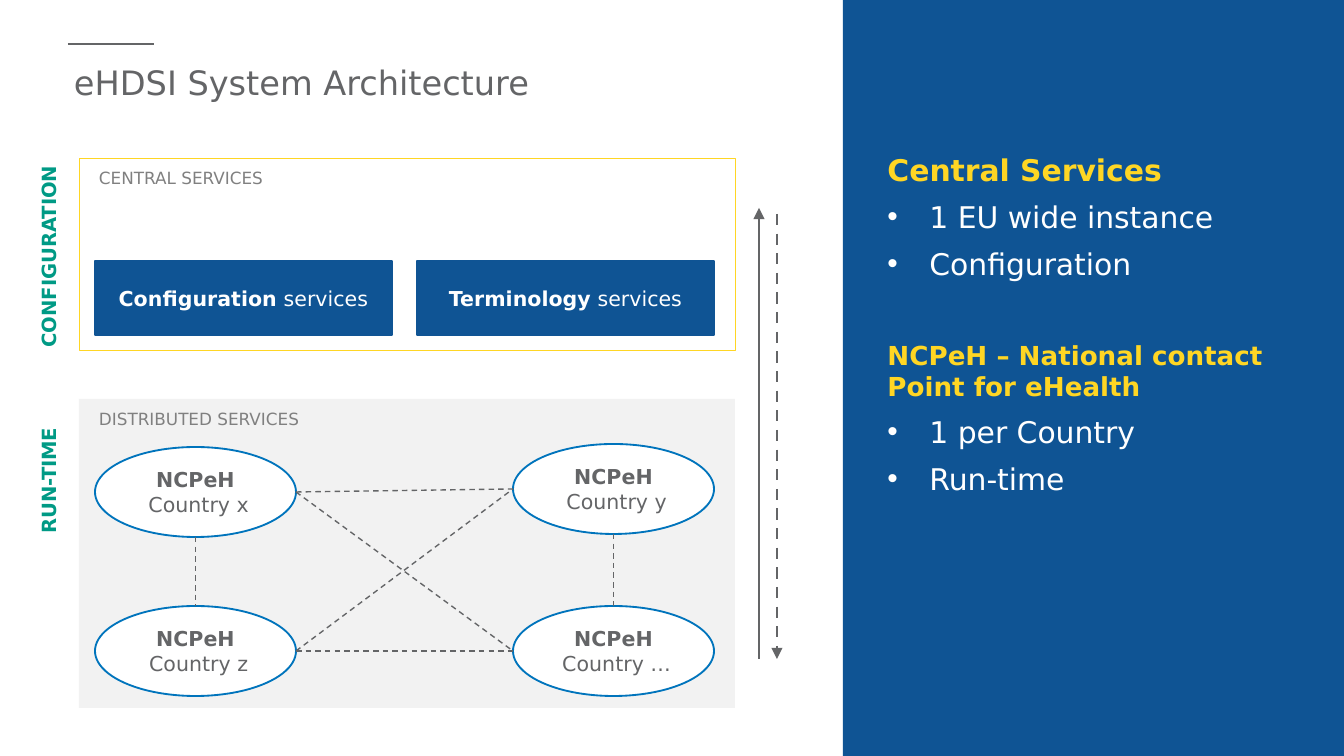
from lxml import etree
from pptx import Presentation
from pptx import util as u
from pptx.dml import color, line as dml_line
from pptx.enum import dml, shapes, text
from pptx.oxml import ns

FONT = "DejaVu Sans"
BLUE, YELLOW, GREY, WHITE = "0F5494", "FFD624", "646567", "FFFFFF"
OVAL_W, OVAL_H = 201, 90
LEFT_X, RIGHT_X = 95, 513
BULLET_INDENT = 42


def px(length):
    """Turn whole pixels into EMU."""
    return u.Emu(round(length * 914400 / 134.4))


def rgb(value):
    """Turn a hex string into a colour."""
    return color.RGBColor.from_string(value)


def add_span(para, wording, size, ink, bold=False):
    """Add one formatted run to a paragraph."""
    span = para.add_run()
    span.text = wording
    span.font.name = FONT
    span.font.size = u.Pt(size)
    span.font.bold = bold
    span.font.color.rgb = rgb(ink)


def place(box, left, top, width, height):
    """Move and size a shape."""
    box.left, box.top, box.width, box.height = map(px, (left, top, width, height))


def add_block(page, kind, bounds, fill, outline=None, weight=1):
    """Add a filled preset shape with an optional outline."""
    box = page.shapes.add_shape(kind, *map(px, bounds))
    box.shadow.inherit = False
    box.fill.solid()
    box.fill.fore_color.rgb = rgb(fill)
    if outline:
        box.line.color.rgb = rgb(outline)
        box.line.width = u.Pt(weight)
    else:
        box.line.fill.background()
    return box


def add_frame(page, bounds, caption, fill, outline=None):
    """Add a captioned area that groups services."""
    box = add_block(page, shapes.MSO_SHAPE.RECTANGLE, bounds, fill, outline, 0.25)
    frame = box.text_frame
    frame.word_wrap = True
    frame.vertical_anchor = text.MSO_ANCHOR.TOP
    frame.margin_left = frame.margin_right = px(20)
    frame.margin_top = frame.margin_bottom = px(10)
    para = frame.paragraphs[0]
    para.alignment = text.PP_ALIGN.LEFT
    add_span(para, caption, 9, "808080")


def add_service(page, left, name):
    """Add a central service button."""
    box = add_block(page, shapes.MSO_SHAPE.RECTANGLE, (left, 261, 297, 74), BLUE, BLUE, 0.75)
    box.text_frame.vertical_anchor = text.MSO_ANCHOR.MIDDLE
    para = box.text_frame.paragraphs[0]
    para.alignment = text.PP_ALIGN.CENTER
    add_span(para, name, 11, WHITE, True)
    add_span(para, " services", 11, WHITE)


def add_contact_point(page, left, top, country):
    """Add the ellipse of one national contact point."""
    box = add_block(page, shapes.MSO_SHAPE.OVAL, (left, top, OVAL_W, OVAL_H), WHITE, "0074BC")
    frame = box.text_frame
    frame.vertical_anchor = text.MSO_ANCHOR.MIDDLE
    for para, wording, bold in (
        (frame.paragraphs[0], "NCPeH", True),
        (frame.add_paragraph(), f" Country {country}", False),
    ):
        para.alignment = text.PP_ALIGN.CENTER
        add_span(para, wording, 11, GREY, bold)


def add_line(page, start, end, weight, dashed=False, arrow=False):
    """Add a straight grey line, dashed or with an arrowhead if asked."""
    link = page.shapes.add_connector(
        shapes.MSO_CONNECTOR.STRAIGHT, *map(px, (*start, *end)))
    link.line.color.rgb = rgb(GREY)
    link.line.width = u.Pt(weight)
    if dashed:
        link.line.dash_style = dml.MSO_LINE.DASH
    if arrow:
        outline = link.line._get_or_add_ln()
        etree.SubElement(outline, ns.qn("a:tailEnd"), type="triangle")
    etree.SubElement(link._element.spPr, ns.qn("a:effectLst"))


def add_side_label(page, middle, length, wording):
    """Add a label that reads upwards beside a frame."""
    box = page.shapes.add_textbox(*map(px, (49 - length / 2, middle - 19, length, 38)))
    box.rotation = 270
    box.text_frame.word_wrap = False
    add_span(box.text_frame.paragraphs[0], wording, 10.5, "009A85", True)


def set_bullet(para, bulleted):
    """Give a paragraph a white bullet with hanging indent, or none."""
    props = para._p.get_or_add_pPr()
    indent = px(BULLET_INDENT) if bulleted else 0
    props.set("marL", str(indent))
    props.set("indent", str(-indent))
    if bulleted:
        ink = etree.SubElement(props, ns.qn("a:buClr"))
        etree.SubElement(ink, ns.qn("a:srgbClr"), val=WHITE)
        etree.SubElement(props, ns.qn("a:buChar"), char="•")
    else:
        etree.SubElement(props, ns.qn("a:buNone"))


def fill_title(box):
    """Move and write the slide title."""
    place(box, 69, 52, 699, 60)
    frame = box.text_frame
    frame.auto_size = text.MSO_AUTO_SIZE.NONE
    frame.vertical_anchor = text.MSO_ANCHOR.MIDDLE
    frame.margin_left = frame.margin_right = px(5)
    para = frame.paragraphs[0]
    para.alignment = text.PP_ALIGN.LEFT
    add_span(para, "eHDSI System Architecture", 18, GREY)


def fill_body(box):
    """Move and write the summary list."""
    place(box, 874, 145, 437, 530)
    frame = box.text_frame
    frame.auto_size = text.MSO_AUTO_SIZE.NONE
    frame.vertical_anchor = text.MSO_ANCHOR.TOP
    groups = (
        ("Central Services", 16, 0, ("1 EU wide instance", "Configuration")),
        ("NCPeH – National contact Point for eHealth", 14, 25, ("1 per Country", "Run-time")),
    )
    para = frame.paragraphs[0]
    for heading, size, gap, items in groups:
        if gap:
            para = frame.add_paragraph()
        set_bullet(para, False)
        para.space_before, para.space_after = u.Pt(gap), u.Pt(6)
        add_span(para, heading, size, YELLOW, True)
        for item in items:
            para = frame.add_paragraph()
            set_bullet(para, True)
            para.space_before, para.space_after = u.Pt(0), u.Pt(6)
            add_span(para, item, 16, WHITE)


def add_network(page):
    """Add the contact points and the dashed links between them."""
    points = {"x": (LEFT_X, 447), "y": (RIGHT_X, 444), "z": (LEFT_X, 606), "…": (RIGHT_X, 606)}
    for country, (left, top) in points.items():
        add_contact_point(page, left, top, country)
    for west in "xz":
        for east in "y…":
            start = (LEFT_X + OVAL_W, points[west][1] + OVAL_H / 2)
            end = (RIGHT_X, points[east][1] + OVAL_H / 2)
            add_line(page, start, end, 0.75, dashed=True)
    for upper, lower in ("xz", "y…"):
        middle = points[upper][0] + OVAL_W / 2
        add_line(page, (middle, points[upper][1] + OVAL_H), (middle, points[lower][1]),
                 0.75, dashed=True)


def main():
    """Build and save the slide."""
    deck = Presentation()
    deck.slide_width, deck.slide_height = px(1344), px(756)
    page = deck.slides.add_slide(deck.slide_layouts[1])
    panel = add_block(page, shapes.MSO_SHAPE.RECTANGLE, (843, 0, 501, 756), BLUE)
    page.shapes._spTree.insert(2, panel._element)
    fill_title(page.shapes.title)
    fill_body(page.placeholders[1])
    add_line(page, (68, 44), (154, 44), 1)
    add_frame(page, (79, 399, 656, 309), "DISTRIBUTED SERVICES", "F2F2F2")
    add_network(page)
    add_line(page, (759, 659), (759, 208), 1.5, arrow=True)
    add_line(page, (777, 214), (777, 659), 1.5, dashed=True, arrow=True)
    add_side_label(page, 476, 141, "RUN-TIME")
    add_side_label(page, 251, 219, "CONFIGURATION")
    add_frame(page, (79, 158, 656, 192), "CENTRAL SERVICES", WHITE, YELLOW)
    add_service(page, 95, "Configuration")
    add_service(page, 417, "Terminology")
    deck.save("out.pptx")


if __name__ == "__main__":
    main()
